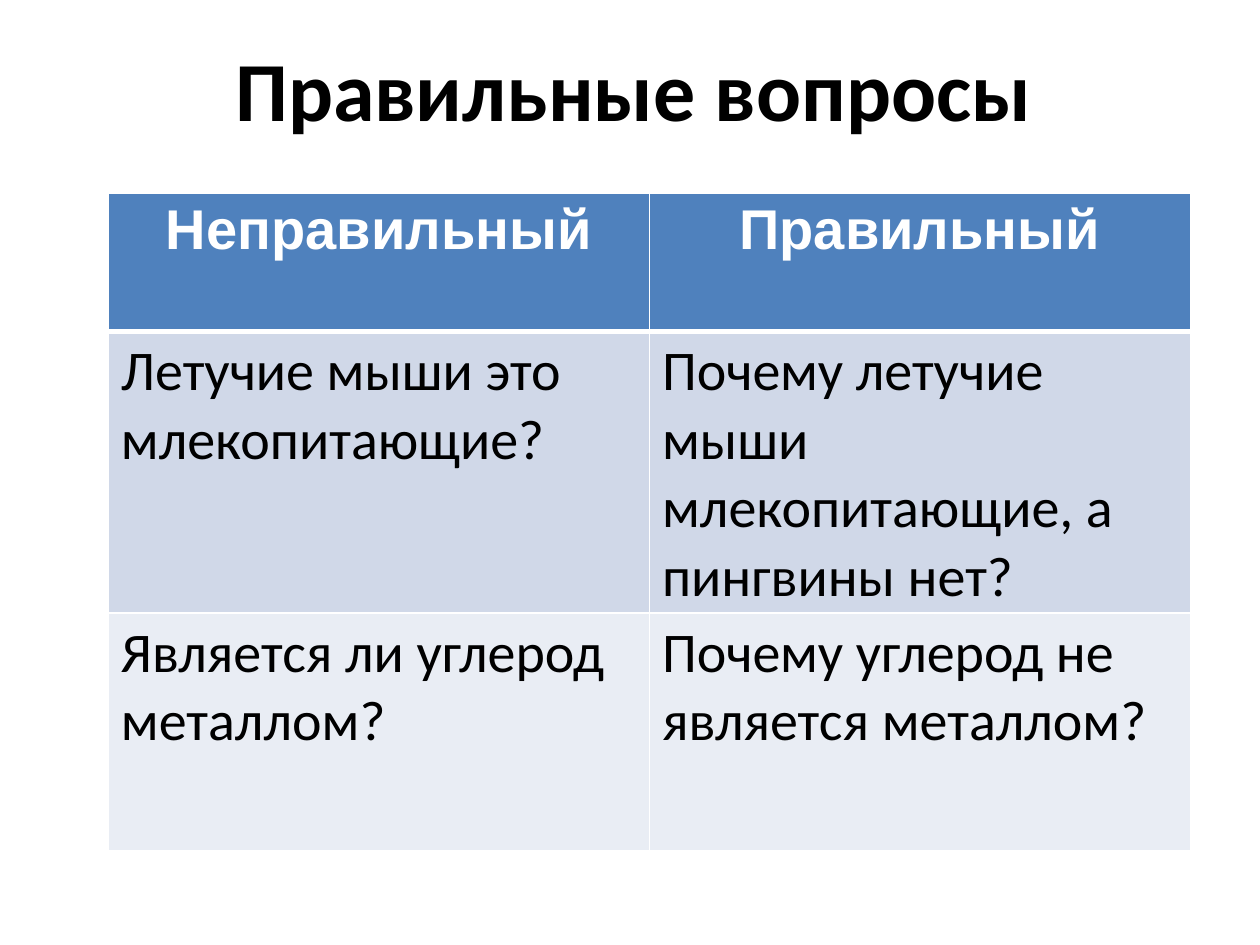
from lxml.etree import SubElement
from pptx import Presentation
from pptx.dml.color import RGBColor
from pptx.enum.text import MSO_ANCHOR, PP_ALIGN
from pptx.oxml.ns import qn
from pptx.util import Inches, Pt

BLACK = RGBColor(0x00, 0x00, 0x00)
WHITE = RGBColor(0xFF, 0xFF, 0xFF)
HEADER_BLUE = RGBColor(0x4F, 0x81, 0xBD)
BAND_DARK = RGBColor(0xD0, 0xD8, 0xE8)
BAND_LIGHT = RGBColor(0xE9, 0xED, 0xF4)

TITLE_FONT = {"name": "Calibri", "size": Pt(48), "bold": True}
HEADER_FONT = {"name": "Arial", "size": Pt(32), "bold": True}
BODY_FONT = {"name": "Calibri", "size": Pt(32), "bold": False}

QUESTIONS = [
    ("Неправильный", "Правильный"),
    ("Летучие мыши это млекопитающие?",
     "Почему летучие мыши млекопитающие, а пингвины нет?"),
    ("Является ли углерод металлом?",
     "Почему углерод не является металлом?"),
]
ROW_HEIGHTS = [1.1, 1.89, 1.89]
ROW_STYLES = [
    (HEADER_BLUE, HEADER_FONT, WHITE, PP_ALIGN.CENTER),
    (BAND_DARK, BODY_FONT, BLACK, PP_ALIGN.LEFT),
    (BAND_LIGHT, BODY_FONT, BLACK, PP_ALIGN.LEFT),
]


def write_text(frame, text, font_format, color, alignment):
    paragraph = frame.paragraphs[0]
    paragraph.alignment = alignment
    run = paragraph.add_run()
    run.text = text
    for attribute, value in font_format.items():
        setattr(run.font, attribute, value)
    run.font.color.rgb = color


def set_borders(cell, widths):
    properties = cell._tc.get_or_add_tcPr()
    for side, width in widths.items():
        border = SubElement(properties, qn(f"a:ln{side}"), w=str(Pt(width)))
        fill = SubElement(border, qn("a:solidFill"))
        SubElement(fill, qn("a:srgbClr"), val=str(WHITE))


def add_title(slide, left, top, width, height):
    title = slide.shapes.add_textbox(
        Inches(left), Inches(top), Inches(width), Inches(height))
    frame = title.text_frame
    frame.word_wrap = True
    frame.vertical_anchor = MSO_ANCHOR.MIDDLE
    write_text(frame, "Правильные вопросы", TITLE_FONT, BLACK, PP_ALIGN.CENTER)


def add_questions(slide, left, top, width):
    questions = slide.shapes.add_table(
        len(QUESTIONS), len(QUESTIONS[0]), Inches(left), Inches(top),
        Inches(width), Inches(sum(ROW_HEIGHTS))).table
    for index, (texts, height, style) in enumerate(
            zip(QUESTIONS, ROW_HEIGHTS, ROW_STYLES)):
        band, font_format, color, alignment = style
        row = questions.rows[index]
        row.height = Inches(height)
        widths = {"L": 1, "R": 1, "T": 3 if index == 1 else 1,
                  "B": 3 if index == 0 else 1}
        for cell, text in zip(row.cells, texts):
            set_borders(cell, widths)
            cell.fill.solid()
            cell.fill.fore_color.rgb = band
            write_text(cell.text_frame, text, font_format, color, alignment)


def main():
    presentation = Presentation()
    presentation.slide_width = Inches(10)
    presentation.slide_height = Inches(7.5)
    slide = presentation.slides.add_slide(presentation.slide_layouts[6])
    add_title(slide, 0.78, 0.62, 8.5, 0.16)
    add_questions(slide, 0.86, 1.53, 8.59)
    presentation.save("out.pptx")


if __name__ == "__main__":
    main()
